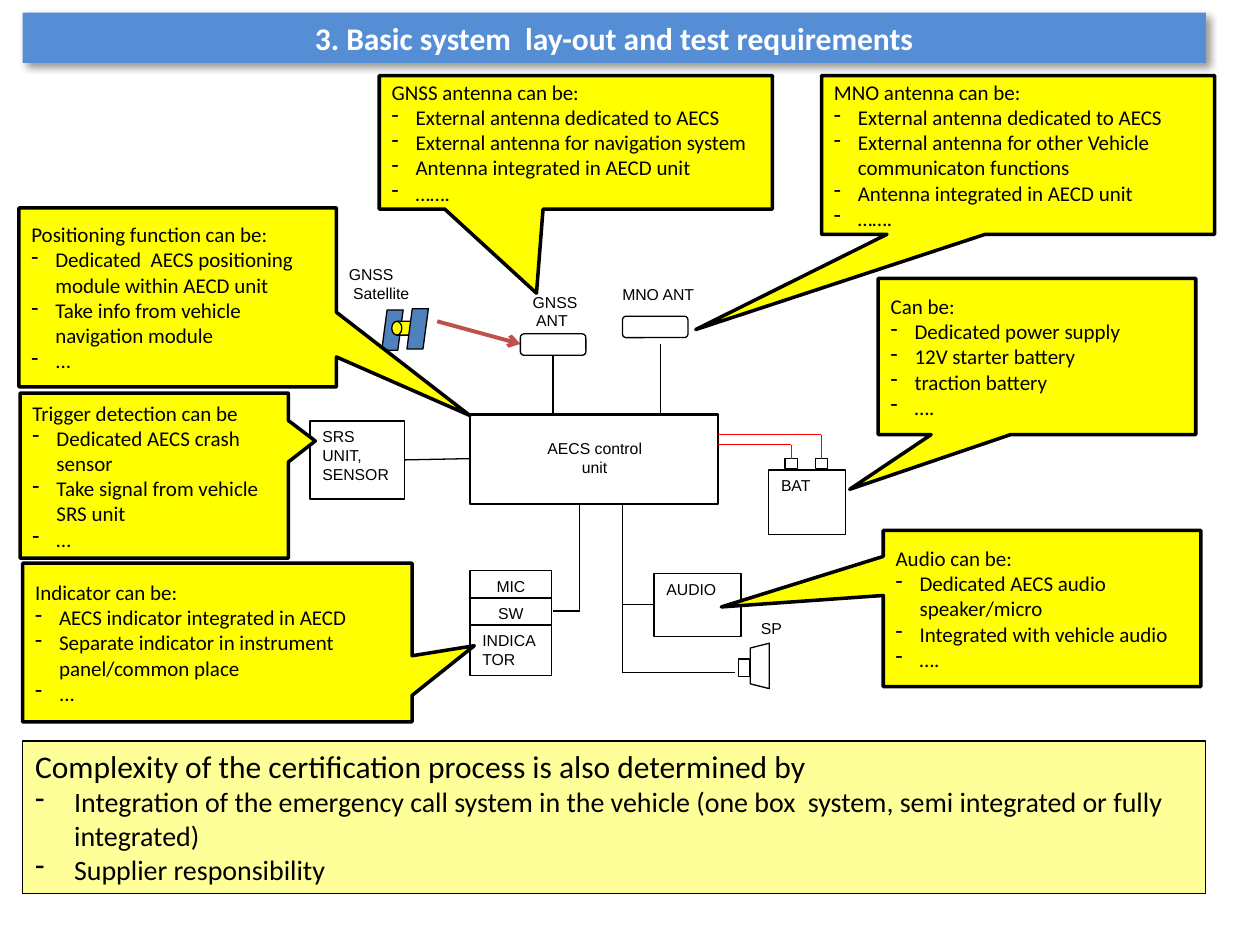
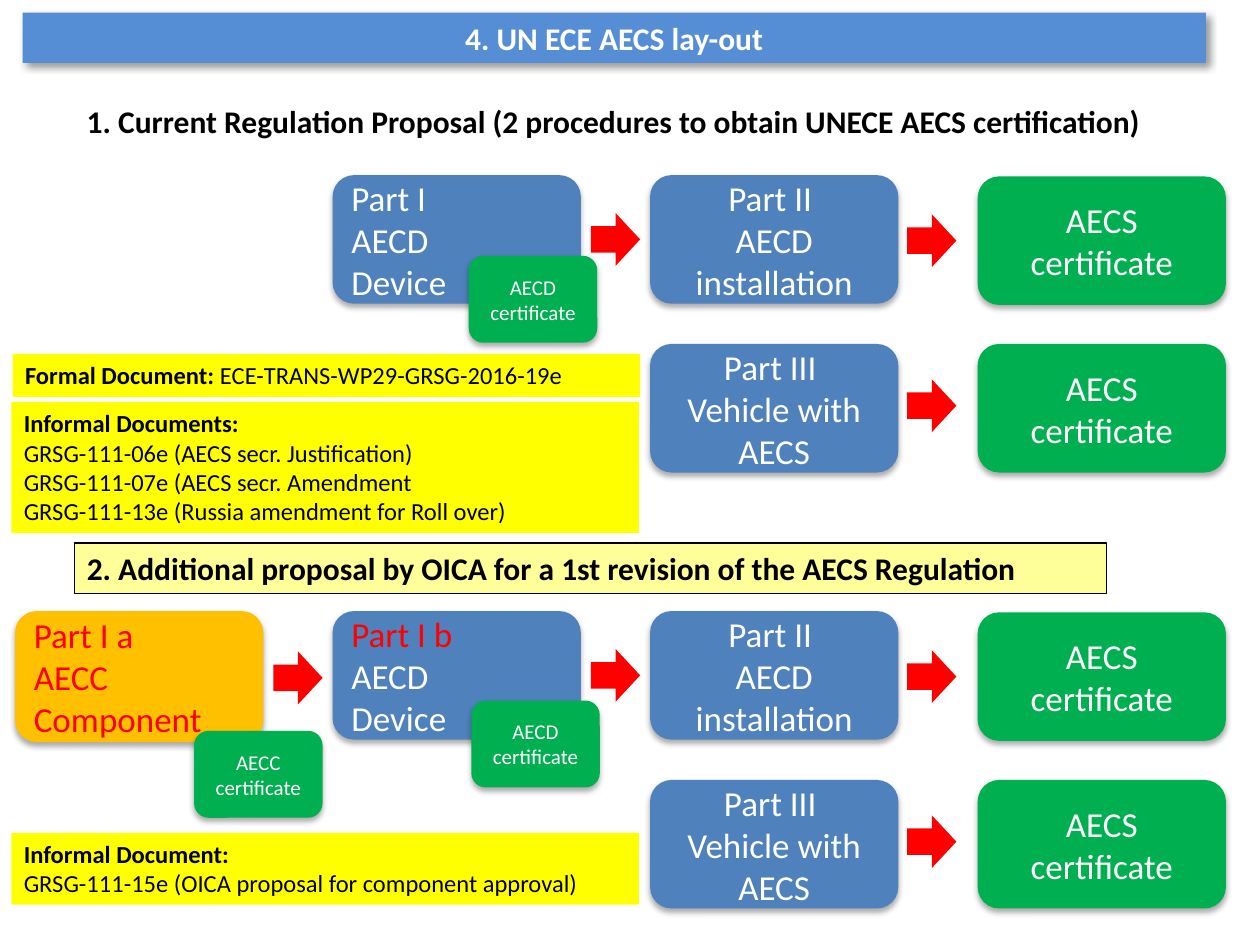
import lxml.etree
import pptx
import pptx.dml.color
import pptx.enum.shapes
import pptx.enum.text
import pptx.oxml.ns
import pptx.util

Inches = pptx.util.Inches
KIND = pptx.enum.shapes.MSO_SHAPE
ALIGN = pptx.enum.text.PP_ALIGN
ANCHOR = pptx.enum.text.MSO_ANCHOR
qn = pptx.oxml.ns.qn

COLORS = {
    "black": "000000", "white": "FFFFFF", "band": "558ED5", "blue": "4F81BD",
    "yellow": "FFFF00", "cream": "FFFF99", "green": "00B050",
    "amber": "FFC000", "red": "FF0000", "signal": "C0504D",
}
BAND_SHADOW = {"alpha": 40, "blur": 4, "distance": 3, "angle": 45}
CARD_SHADOW = {"alpha": 32, "blur": 3.5, "distance": 2.2, "angle": 90}
LABEL = {"name": "Arial", "size": 9}
NOTE = {"name": "Calibri", "size": 12}
HEADING = {"name": "Calibri", "size": 18, "bold": True}
DOCUMENT = {"name": "Calibri", "size": 14}
CARD = {"name": "Calibri", "size": 20, "color": "white"}
BADGE = {"name": "Calibri", "size": 12, "color": "white"}


def rgb(name):
    return pptx.dml.color.RGBColor.from_string(COLORS[name])


def format_run(run, style):
    values = {"color": "black", **style}
    run.font.color.rgb = rgb(values.pop("color"))
    values["size"] = pptx.util.Pt(values["size"])
    for attribute, value in values.items():
        setattr(run.font, attribute, value)


def add_bullet(paragraph, indent):
    properties = paragraph._p.get_or_add_pPr()
    properties.set("marL", str(Inches(indent)))
    properties.set("indent", str(-Inches(indent)))
    lxml.etree.SubElement(properties, qn("a:buChar")).set("char", "-")


def write(shape, paragraphs, style, align=ALIGN.LEFT, anchor=ANCHOR.TOP,
          bullet_indent=None, wrap=True):
    frame = shape.text_frame
    frame.word_wrap = wrap
    frame.vertical_anchor = anchor
    for index, runs in enumerate(paragraphs):
        paragraph = frame.add_paragraph() if index else frame.paragraphs[0]
        paragraph.alignment = align
        if bullet_indent and index:
            add_bullet(paragraph, bullet_indent)
        if isinstance(runs, str):
            runs = [(runs, {})]
        for text, changes in runs:
            run = paragraph.add_run()
            run.text = text
            format_run(run, {**style, **changes})


def add_shadow(shape, alpha, blur, distance, angle):
    effects = shape.element.spPr.find(qn("a:effectLst"))
    shadow = lxml.etree.SubElement(effects, qn("a:outerShdw"))
    values = {"blurRad": pptx.util.Pt(blur), "dist": pptx.util.Pt(distance),
              "dir": angle * 60000, "algn": "ctr", "rotWithShape": 0}
    for attribute, value in values.items():
        shadow.set(attribute, str(value))
    color = lxml.etree.SubElement(shadow, qn("a:srgbClr"), val=COLORS["black"])
    lxml.etree.SubElement(color, qn("a:alpha"), val=str(alpha * 1000))


def add_shape(slide, kind, box, fill=None, line=None, shadow=None):
    shape = slide.shapes.add_shape(kind, *map(Inches, box))
    shape.shadow.inherit = False
    if fill:
        shape.fill.solid()
        shape.fill.fore_color.rgb = rgb(fill)
    else:
        shape.fill.background()
    if line:
        shape.line.color.rgb = rgb("black")
        shape.line.width = pptx.util.Pt(line)
    else:
        shape.line.fill.background()
    if shadow:
        add_shadow(shape, **shadow)
    return shape


def add_label(slide, box, paragraphs, style=LABEL, **layout):
    write(slide.shapes.add_textbox(*map(Inches, box)), paragraphs, style, **layout)


def add_unit(slide, box, paragraphs, align=ALIGN.LEFT):
    write(add_shape(slide, KIND.RECTANGLE, box, line=0.75), paragraphs, LABEL, align)


def add_wire(slide, points, color="black", width=0.75, arrow=False):
    for start, end in zip(points, points[1:]):
        wire = slide.shapes.add_connector(
            pptx.enum.shapes.MSO_CONNECTOR.STRAIGHT, *map(Inches, start + end))
        wire.line.color.rgb = rgb(color)
        wire.line.width = pptx.util.Pt(width)
        properties = wire.element.spPr
        if arrow:
            lxml.etree.SubElement(properties.find(qn("a:ln")), qn("a:tailEnd"), type="arrow")
        lxml.etree.SubElement(properties, qn("a:effectLst"))


def add_callout(slide, box, pointer, paragraphs):
    shape = add_shape(slide, KIND.RECTANGULAR_CALLOUT, box, "yellow", 2)
    for index, value in enumerate(pointer):
        shape.adjustments[index] = value
    write(shape, paragraphs, NOTE, anchor=ANCHOR.MIDDLE, bullet_indent=0.19)


def add_title(slide, title):
    band = add_shape(slide, KIND.RECTANGLE, (0.18, 0.1, 9.39, 0.4), "band", shadow=BAND_SHADOW)
    write(band, [title], {**HEADING, "color": "white"}, ALIGN.CENTER)


def add_card(slide, left, top, fill, paragraphs, align=ALIGN.CENTER, size=(1.97, 1.02), style=CARD):
    card = add_shape(slide, KIND.ROUNDED_RECTANGLE, (left, top, *size), fill, shadow=CARD_SHADOW)
    write(card, paragraphs, style, align, ANCHOR.MIDDLE)


def add_badge(slide, left, top, text):
    add_card(slide, left, top, "green", [text], size=(1.02, 0.69), style=BADGE)


def add_arrow(slide, left, top):
    add_shape(slide, KIND.RIGHT_ARROW, (left, top, 0.39, 0.42), "red")


def add_documents(slide, box, paragraphs):
    write(add_shape(slide, KIND.RECTANGLE, box, "yellow"), paragraphs, DOCUMENT)


def add_procedures(slide, top, device):
    add_card(slide, 2.64, top, "blue", [device, "AECD", "Device"], ALIGN.LEFT)
    add_card(slide, 5.16, top, "blue", ["Part II ", "AECD installation"])
    add_card(slide, 5.16, top + 1.34, "blue", ["Part III ", "Vehicle with AECS"])
    add_arrow(slide, 4.69, top + 0.3)
    for offset, arrow_offset in ((0.01, 0.31), (1.34, 1.62)):
        add_arrow(slide, 7.2, top + arrow_offset)
        add_card(slide, 7.76, top + offset, "green", ["AECS certificate"])


def draw_satellite(slide):
    add_shape(slide, KIND.PARALLELOGRAM, (3.03, 2.46, 0.17, 0.32), "blue", 0.75)
    drum = add_shape(slide, KIND.FLOWCHART_DIRECT_ACCESS_STORAGE,
                     (3.11, 2.55, 0.24, 0.11), "yellow", 0.75)
    drum.element.spPr.find(qn("a:xfrm")).set("flipH", "1")
    add_shape(slide, KIND.PARALLELOGRAM, (3.23, 2.45, 0.17, 0.32), "blue", 0.75)
    add_label(slide, (2.67, 2.05, 0.73, 0.31), ["GNSS", " Satellite"])
    add_wire(slide, [(3.47, 2.55), (4.13, 2.73)], "signal", 2.25, arrow=True)


def draw_units(slide):
    add_shape(slide, KIND.RECTANGLE, (3.73, 3.29, 1.97, 0.71), line=1.5)
    add_label(slide, (4.2, 3.43, 1.04, 0.48), ["AECS control unit"], align=ALIGN.CENTER)
    add_label(slide, (4.13, 2.27, 1.04, 0.31), ["GNSS", " ANT"])
    add_label(slide, (4.84, 2.21, 0.78, 0.3), ["MNO ANT"])
    add_label(slide, (5.94, 4.86, 0.79, 0.23), ["SP"])
    add_unit(slide, (5.19, 4.55, 0.69, 0.5), ["AUDIO"])
    add_unit(slide, (6.1, 3.73, 0.61, 0.51), ["BAT"])
    add_unit(slide, (2.46, 3.34, 0.75, 0.62), ["SRS", "UNIT,", "SENSOR"])
    add_unit(slide, (3.73, 4.53, 0.65, 0.22), ["MIC"], ALIGN.CENTER)
    add_unit(slide, (3.73, 4.74, 0.65, 0.22), ["SW"], ALIGN.CENTER)
    add_unit(slide, (3.73, 4.96, 0.65, 0.4), ["INDICATOR"])
    for antenna in ((4.13, 2.65), (4.94, 2.51)):
        add_shape(slide, KIND.ROUNDED_RECTANGLE, (*antenna, 0.52, 0.17), "white", 0.75)
    for terminal_left in (6.23, 6.47):
        add_shape(slide, KIND.RECTANGLE, (terminal_left, 3.64, 0.1, 0.08), "white", 0.75)
    horn = add_shape(slide, KIND.TRAPEZOID, (5.85, 5.21, 0.36, 0.15), "white", 0.75)
    horn.rotation = 270
    add_shape(slide, KIND.RECTANGLE, (5.86, 5.23, 0.09, 0.14), "white", 0.75)


def draw_wires(slide):
    for points in (
        [(4.39, 2.82), (4.39, 3.29)],
        [(5.24, 2.73), (5.24, 3.29)],
        [(4.6, 4), (4.6, 4.85), (4.39, 4.85)],
        [(4.94, 4), (4.94, 5.34), (5.83, 5.34)],
        [(4.94, 4.8), (5.19, 4.8)],
        [(3.21, 3.65), (3.73, 3.64)],
    ):
        add_wire(slide, points)
    for left, top in ((6.52, 3.45), (6.28, 3.53)):
        add_wire(slide, [(5.7, top), (left, top), (left, 3.64)], "red")


def draw_callouts(slide):
    add_callout(slide, (6.97, 2.21, 2.52, 1.24), (-0.59, 0.85), [
        "Can be:", "Dedicated power supply", "12V starter battery", "traction battery", "…."])
    add_callout(slide, (6.52, 0.6, 3.12, 1.26), (-0.82, 1.1), [
        "MNO antenna can be:", "External antenna dedicated to AECS",
        "External antenna for other Vehicle communicaton functions",
        "Antenna integrated in AECD unit", "……."])
    add_callout(slide, (3.01, 0.6, 3.12, 1.06), (-0.1, 1.13), [
        "GNSS antenna can be:", "External antenna dedicated to AECS",
        "External antenna for navigation system", "Antenna integrated in AECD unit", "……."])
    add_callout(slide, (7.01, 4.21, 2.52, 1.24), (-1.01, -0.01), [
        "Audio can be:", "Dedicated AECS audio speaker/micro",
        "Integrated with vehicle audio", "…."])
    add_callout(slide, (0.18, 4.47, 3.09, 1.26), (0.66, 0.02), [
        "Indicator can be:", "AECS indicator integrated in AECD",
        "Separate indicator in instrument panel/common place", "..."])
    add_callout(slide, (0.15, 1.65, 2.52, 1.42), (0.92, 0.66), [
        "Positioning function can be:", "Dedicated  AECS positioning module within AECD unit",
        "Take info from vehicle navigation module", "..."])
    add_callout(slide, (0.16, 3.12, 2.13, 1.31), (0.6, -0.21), [
        "Trigger detection can be", "Dedicated AECS crash sensor",
        "Take signal from vehicle SRS unit", "…"])


def build_system_slide(slide):
    draw_satellite(slide)
    draw_units(slide)
    draw_wires(slide)
    add_title(slide, "3. Basic system  lay-out and test requirements")
    summary = add_shape(slide, KIND.RECTANGLE, (0.18, 5.88, 9.39, 1.21), "cream", 0.75)
    write(summary, [
        [("Complexity of the certification process is also determined by", {"size": 18})],
        "Integration of the emergency call system in the vehicle "
        "(one box  system, semi integrated or fully integrated)",
        "Supplier responsibility",
    ], {"name": "Calibri", "size": 16}, bullet_indent=0.31)
    draw_callouts(slide)


def build_regulation_slide(slide):
    bold = {"bold": True}
    red = {"color": "red"}
    add_title(slide, "4. UN ECE AECS lay-out")
    add_label(slide, (0.59, 0.76, 8.64, 0.4), [
        "1. Current Regulation Proposal (2 procedures to obtain UNECE AECS certification)",
    ], HEADING, wrap=False)
    add_procedures(slide, 1.39, "Part I")
    add_badge(slide, 3.72, 2.03, "AECD certificate")
    add_documents(slide, (0.1, 2.81, 4.98, 0.34), [
        [("Formal Document: ", bold), ("ECE-TRANS-WP29-GRSG-2016-19e", {})]])
    add_documents(slide, (0.09, 3.19, 4.98, 1.04), [
        [("Informal Documents:", bold)],
        "GRSG-111-06e (AECS secr. Justification)",
        "GRSG-111-07e (AECS secr. Amendment",
        "GRSG-111-13e (Russia amendment for Roll over)"])

    revision = add_shape(slide, KIND.RECTANGLE, (0.59, 4.31, 8.19, 0.4), "cream", 0.75)
    write(revision, [
        "2. Additional proposal by OICA for a 1st revision of the AECS Regulation"], HEADING)
    add_procedures(slide, 4.85, [("Part I b", red)])
    add_card(slide, 0.12, 4.85, "amber", ["Part I a", "AECC", "Component"], ALIGN.LEFT,
             size=(1.97, 1.04), style={**CARD, **red})
    add_arrow(slide, 2.17, 5.17)
    add_badge(slide, 1.54, 5.8, "AECC certificate")
    add_badge(slide, 3.74, 5.56, "AECD certificate")
    add_documents(slide, (0.09, 6.61, 4.98, 0.57), [
        [("Informal Document:", bold)],
        "GRSG-111-15e (OICA proposal for component approval)"])


def main():
    presentation = pptx.Presentation()
    presentation.slide_width = Inches(10)
    presentation.slide_height = Inches(7.5)
    for build in (build_system_slide, build_regulation_slide):
        build(presentation.slides.add_slide(presentation.slide_layouts[6]))
    presentation.save("out.pptx")


if __name__ == "__main__":
    main()
